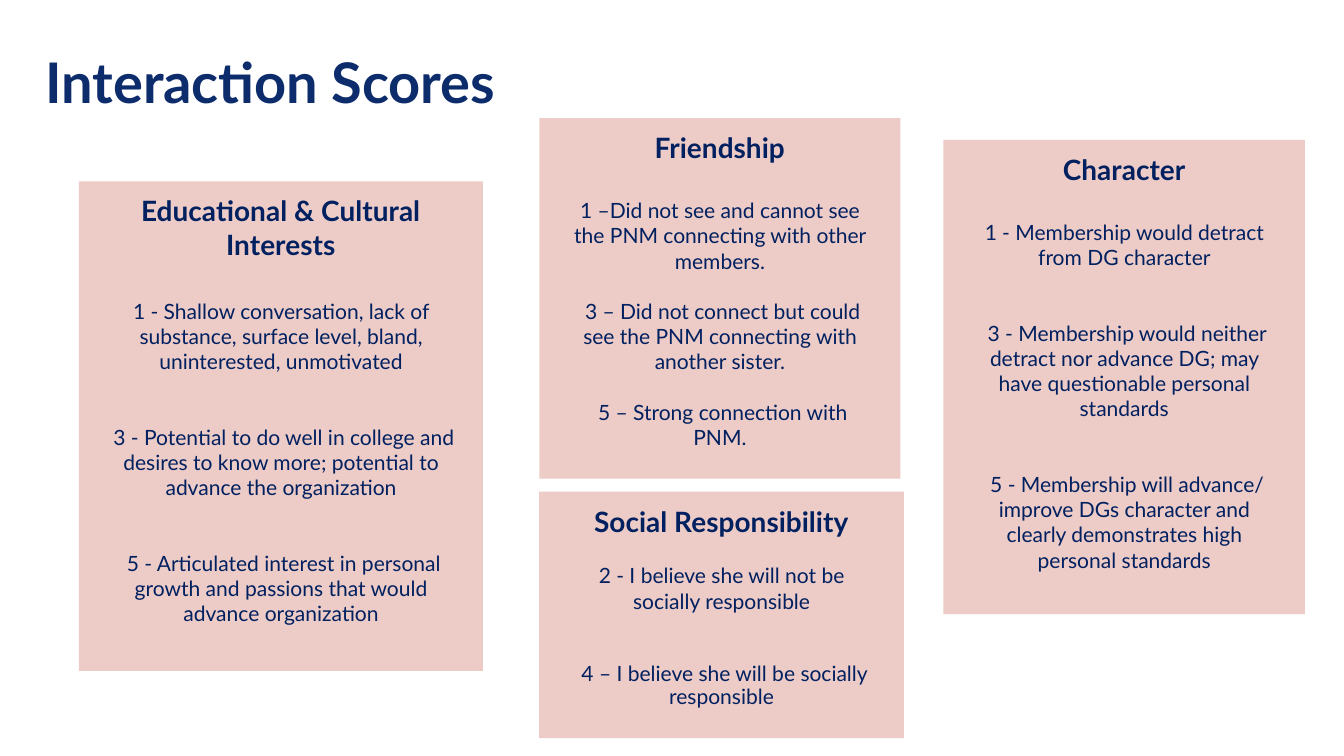
from pptx import Presentation
from pptx.dml.color import RGBColor
from pptx.enum.shapes import MSO_SHAPE as Shape
from pptx.enum.text import MSO_ANCHOR as Anchor, MSO_AUTO_SIZE as AutoSize, PP_ALIGN as Align
from pptx.util import Pt

NAVY = RGBColor(0x00, 0x20, 0x60)
TITLE_BLUE = RGBColor(0x0D, 0x2C, 0x6C)
ROSE = RGBColor(0xED, 0xCB, 0xC6)

TITLE_FONT = {"name": "Lato", "size": Pt(16), "bold": True}
HEADING_FONT = {"name": "Lato", "size": Pt(8), "bold": True}
SCORE_FONT = {"name": "Lato", "size": Pt(6), "bold": False}
FRAME = {"word_wrap": True, "auto_size": AutoSize.NONE, "vertical_anchor": Anchor.TOP,
         "margin_left": Pt(7.2), "margin_right": Pt(7.2),
         "margin_top": Pt(3.6), "margin_bottom": Pt(3.6)}

# box (left, top, width, height), heading, gap below heading, gap between scores, scores
CARDS = [
    ((154.1, 33.8, 103.2, 103), "Friendship", 9.6, 7.2, [
        "1 –Did not see and cannot see the PNM connecting with other members.",
        " 3 – Did not connect but could see the PNM connecting with another sister.",
        " 5 – Strong connection with PNM."]),
    ((22.5, 51.8, 115.5, 139.9), "Educational & Cultural Interests", 10.8, 14.4, [
        "1 - Shallow conversation, lack of substance, surface level, bland, "
        "uninterested, unmotivated",
        " 3 - Potential to do well in college and desires to know more; "
        "potential to advance the organization",
        " 5 - Articulated interest in personal growth and passions that would "
        "advance organization"]),
    ((269.6, 40, 103.3, 135.5), "Character", 9.6, 14.4, [
        "1 - Membership would detract from DG character",
        " 3 - Membership would neither detract nor advance DG; may have "
        "questionable personal standards",
        " 5 - Membership will advance/ improve DGs character and clearly "
        "demonstrates high personal standards"]),
    ((154.1, 140.5, 104.2, 70.4), "Social Responsibility", 7.2, 14.4, [
        "2 - I believe she will not be socially responsible",
        " 4 – I believe she will be socially responsible"]),
]


def apply(target, values):
    for name, value in values.items():
        setattr(target, name, value)


def write(para, text, align, font, color, gap=0):
    para.alignment = align
    para.space_before = Pt(gap)
    span = para.add_run()
    span.text = text
    apply(span.font, font)
    span.font.color.rgb = color


def add_title(page, text, left, top, width, height):
    title = page.shapes.title
    apply(title, {"left": Pt(left), "top": Pt(top), "width": Pt(width), "height": Pt(height)})
    apply(title.text_frame, FRAME)
    write(title.text_frame.paragraphs[0], text, Align.LEFT, TITLE_FONT, TITLE_BLUE)


def add_card(page, box, heading, heading_gap, score_gap, scores):
    card = page.shapes.add_shape(Shape.RECTANGLE, *map(Pt, box))
    card.shadow.inherit = False
    card.fill.solid()
    card.fill.fore_color.rgb = ROSE
    card.line.fill.background()
    frame = card.text_frame
    apply(frame, FRAME)
    write(frame.paragraphs[0], heading, Align.CENTER, HEADING_FONT, NAVY)
    for index, score in enumerate(scores):
        gap = score_gap if index else heading_gap
        write(frame.add_paragraph(), score, Align.CENTER, SCORE_FONT, NAVY, gap)
    return frame


def main():
    deck = Presentation()
    deck.slide_width, deck.slide_height = Pt(384), Pt(216)
    page = deck.slides.add_slide(deck.slide_layouts[5])
    add_title(page, "Interaction Scores", 5.8, 10, 324, 23.8)
    for card in CARDS:
        frame = add_card(page, *card)
    frame.paragraphs[-1].line_spacing = 0.9
    deck.save("out.pptx")


if __name__ == "__main__":
    main()
